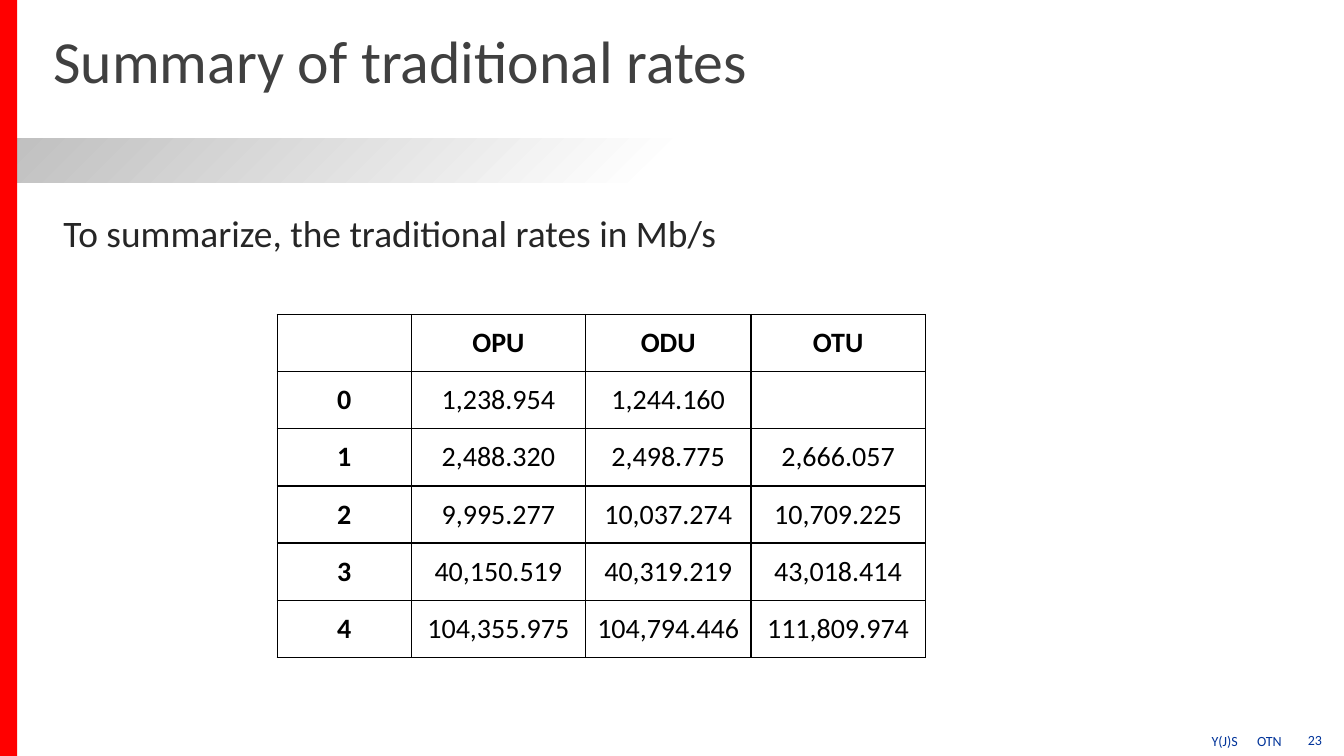
from dataclasses import dataclass

from lxml import etree
from pptx import Presentation
from pptx import util as u
from pptx.dml.color import RGBColor
from pptx.enum import shapes, text
from pptx.oxml import ns

COLUMNS, ROWS = 133.33, 75
GRID = u.Inches(0.1)
FONT = "Calibri"
BLACK, NAVY = "000000", "003399"
ROW_HEIGHT = 5.67
COLUMN_WIDTHS = (13.3, 17.3, 16.4, 17.3)
RATES = (
    ("", "OPU", "ODU", "OTU"),
    ("0", "1,238.954", "1,244.160", ""),
    ("1", "2,488.320", "2,498.775", "2,666.057"),
    ("2", "9,995.277", "10,037.274", "10,709.225"),
    ("3", "40,150.519", "40,319.219", "43,018.414"),
    ("4", "104,355.975", "104,794.446", "111,809.974"),
)


@dataclass(frozen=True)
class Area:
    column: float
    row: float
    columns: float
    rows: float

    def lengths(self) -> tuple[int, ...]:
        return tuple(grid(n) for n in (self.column, self.row, self.columns, self.rows))


@dataclass(frozen=True)
class Label:
    words: str
    area: Area
    size: float
    color: str
    margins: tuple[float, float] = (1, 0.5)
    align: text.PP_ALIGN = text.PP_ALIGN.LEFT
    tab: float = 0


LABELS = (
    Label("To summarize, the traditional rates in Mb/s",
          Area(5.3, 20.4, 123.1, 44.9), 26.7, "262626"),
    Label("Y(J)S\tOTN", Area(11.89 * 10, 72, 12.2, 3), 10, NAVY, (1.3, 0.7), tab=4.5),
    Label("23", Area(127.7, 71.9, 5.5, 3), 10, NAVY, (1.3, 0.7), text.PP_ALIGN.CENTER),
)


def grid(count: float) -> int:
    return round(GRID * count)


def rgb(color: str) -> RGBColor:
    return RGBColor.from_string(color)


def style(para, size: float, color: str, bold: bool = False) -> None:
    font = para.font
    font.name, font.size, font.bold = FONT, u.Pt(size), bold
    font.color.rgb = rgb(color)


def set_margins(frame, across: float, down: float) -> None:
    frame.margin_left = frame.margin_right = grid(across)
    frame.margin_top = frame.margin_bottom = grid(down)


def add_bar(page, area: Area):
    bar = page.shapes.add_shape(shapes.MSO_SHAPE.RECTANGLE, *area.lengths())
    bar.shadow.inherit = False
    bar.line.fill.background()
    return bar


def add_bars(page) -> None:
    fade = add_bar(page, Area(0, 13.7, COLUMNS, 4.4)).fill
    fade.gradient()
    fade.gradient_angle = 315
    for stop, position, color in zip(fade.gradient_stops, (0, 0.5), ("BFBFBF", "FFFFFF")):
        stop.position = position
        stop.color.rgb = rgb(color)
    edge = add_bar(page, Area(0, 0, 1.7, ROWS)).fill
    edge.solid()
    edge.fore_color.rgb = rgb("FF0000")


def set_title(page) -> None:
    title = page.shapes.title
    title.left, title.top, title.width, title.height = Area(5.3, 2.2, 100.9, 8.6).lengths()
    frame = title.text_frame
    frame.text = "Summary of traditional rates"
    frame.auto_size = text.MSO_AUTO_SIZE.NONE
    frame.vertical_anchor = text.MSO_ANCHOR.MIDDLE
    set_margins(frame, 0, 0)
    para = frame.paragraphs[0]
    para.alignment, para.line_spacing = text.PP_ALIGN.LEFT, 0.85
    style(para, 42.7, "404040")


def add_label(page, label: Label) -> None:
    frame = page.shapes.add_textbox(*label.area.lengths()).text_frame
    frame.word_wrap = True
    set_margins(frame, *label.margins)
    para = frame.paragraphs[0]
    para.text, para.alignment = label.words, label.align
    if label.tab:
        tabs = etree.SubElement(para._p.get_or_add_pPr(), ns.qn("a:tabLst"))
        etree.SubElement(tabs, ns.qn("a:tab"), pos=str(grid(label.tab)), algn="l")
    style(para, label.size, label.color)


def outline(cell) -> None:
    properties = cell._tc.get_or_add_tcPr()
    for side in "LRTB":
        line = etree.SubElement(properties, ns.qn(f"a:ln{side}"), w=str(u.Pt(1)))
        fill = etree.SubElement(line, ns.qn("a:solidFill"))
        etree.SubElement(fill, ns.qn("a:srgbClr"), val=BLACK)


def add_rates(page) -> None:
    area = Area(27.5, 31.2, sum(COLUMN_WIDTHS), ROW_HEIGHT * len(RATES))
    table = page.shapes.add_table(len(RATES), len(COLUMN_WIDTHS), *area.lengths()).table
    table.first_row = table.horz_banding = False
    for column, width in zip(table.columns, COLUMN_WIDTHS):
        column.width = grid(width)
    for r, rates in enumerate(RATES):
        table.rows[r].height = grid(ROW_HEIGHT)
        for c, rate in enumerate(rates):
            cell = table.cell(r, c)
            outline(cell)
            cell.fill.background()
            set_margins(cell, 0.1, 0.1)
            cell.vertical_anchor = text.MSO_ANCHOR.MIDDLE
            para = cell.text_frame.paragraphs[0]
            para.text, para.alignment = rate, text.PP_ALIGN.CENTER
            style(para, 20, BLACK, bold=r == 0 or c == 0)


def main() -> None:
    deck = Presentation()
    deck.slide_width, deck.slide_height = grid(COLUMNS), grid(ROWS)
    page = deck.slides.add_slide(deck.slide_layouts[5])
    add_bars(page)
    set_title(page)
    for label in LABELS:
        add_label(page, label)
    add_rates(page)
    deck.save("out.pptx")


if __name__ == "__main__":
    main()
